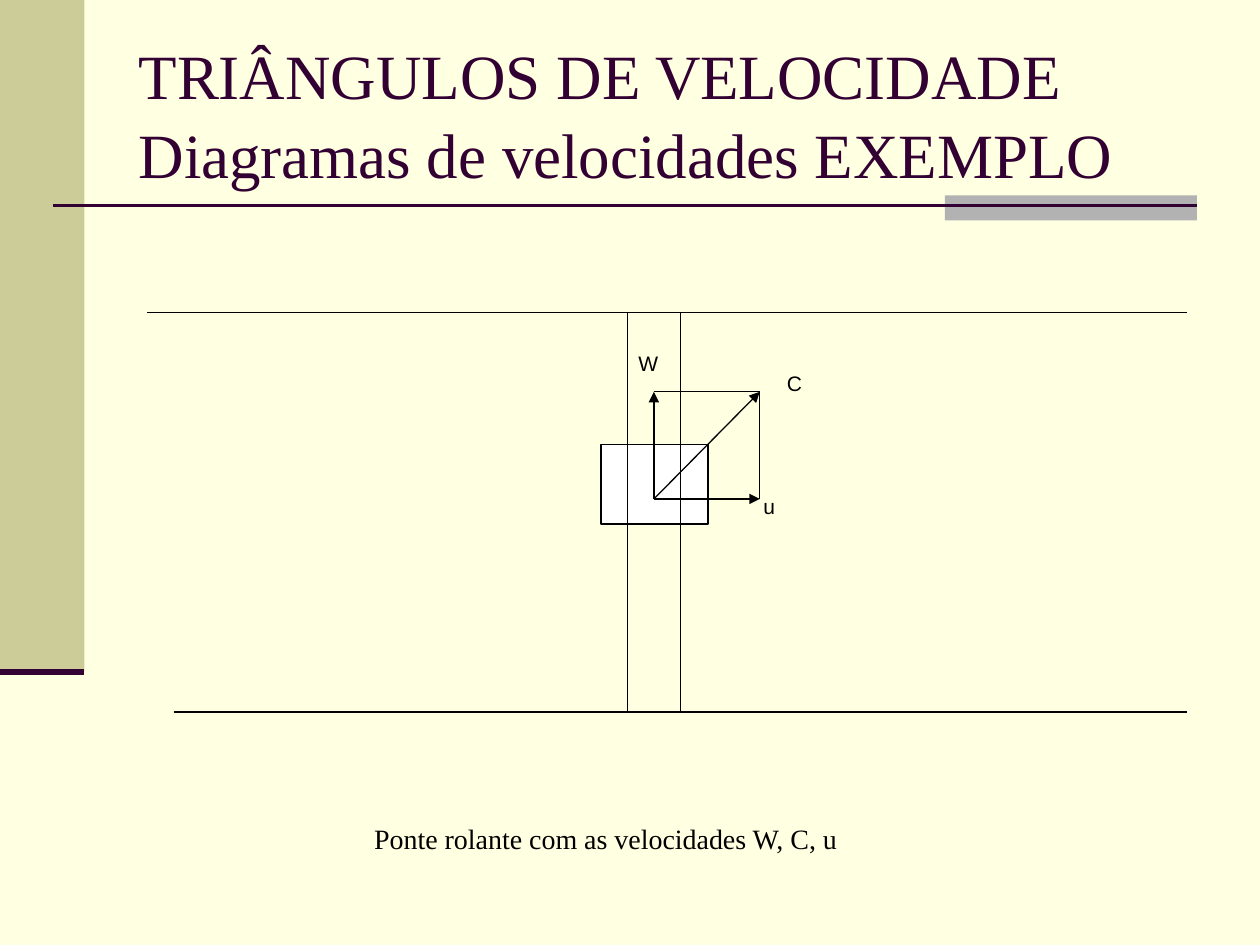
from pptx import Presentation
from pptx.dml.color import RGBColor
from pptx.enum.shapes import MSO_CONNECTOR, MSO_SHAPE
from pptx.enum.text import PP_ALIGN
from pptx.oxml.ns import qn
from pptx.util import Inches, Pt
from lxml import etree

RECTANGLE = MSO_SHAPE.RECTANGLE
STRAIGHT = MSO_CONNECTOR.STRAIGHT
LEFT, CENTER = PP_ALIGN.LEFT, PP_ALIGN.CENTER
color = RGBColor.from_string
PLUM, BLACK = "330033", "000000"

deck = Presentation()
deck.slide_width, deck.slide_height = Inches(10), Inches(7.5)
page = deck.slides.add_slide(deck.slide_layouts[6])
page.background.fill.solid()
page.background.fill.fore_color.rgb = color("FFFFE1")


def add_line(x1, y1, x2, y2, hue=BLACK, width=0.75, arrow=False):
    line = page.shapes.add_connector(
        STRAIGHT, Inches(x1), Inches(y1), Inches(x2), Inches(y2))
    line.line.color.rgb = color(hue)
    line.line.width = Pt(width)
    if arrow:
        etree.SubElement(line.line._get_or_add_ln(), qn("a:tailEnd"), type="triangle")
    etree.SubElement(line._element.spPr, qn("a:effectLst"))


def add_text(x, y, width, height, lines, font, size, hue, align=LEFT, gap=0):
    box = page.shapes.add_textbox(Inches(x), Inches(y), Inches(width), Inches(height))
    frame = box.text_frame
    frame.word_wrap = True
    frame.margin_left = frame.margin_right = Inches(0.02)
    frame.margin_top = frame.margin_bottom = Inches(0.01)
    for index, text in enumerate(lines):
        para = frame.paragraphs[0] if index == 0 else frame.add_paragraph()
        para.alignment = align
        para.space_before = Pt(gap if index else 0)
        span = para.add_run()
        span.text = text
        span.font.name, span.font.size = font, Pt(size)
        span.font.color.rgb = color(hue)


# Side band, title accent and trolley
for x, y, width, height, fill, outline in [
    (0, 0, 0.67, 5.33, "CCCC99", None),
    (7.5, 1.55, 2, 0.2, "B2B2B2", None),
    (4.77, 3.53, 0.85, 0.63, "FFFFFF", BLACK),
]:
    block = page.shapes.add_shape(
        RECTANGLE, Inches(x), Inches(y), Inches(width), Inches(height))
    block.shadow.inherit = False
    block.fill.solid()
    block.fill.fore_color.rgb = color(fill)
    if outline:
        block.line.color.rgb = color(outline)
        block.line.width = Pt(0.75)
    else:
        block.line.fill.background()

# Rules of the page frame
add_line(0.42, 1.63, 9.5, 1.63, PLUM, 1.5)
add_line(0, 5.33, 0.67, 5.33, PLUM, 3.5)

# Title and caption
add_text(1.08, 0.28, 8.42, 1.25,
         ["TRIÂNGULOS DE VELOCIDADE", "Diagramas de velocidades EXEMPLO"],
         "Times New Roman", 36, PLUM, gap=2)
add_text(2.95, 6.51, 4.5, 0.3, ["Ponte rolante com as velocidades W, C, u"],
         "Times New Roman", 16, BLACK)

# Runway rails and bridge girders
rail_top, rail_bottom = 2.48, 5.65
add_line(1.17, rail_top, 9.42, rail_top)
add_line(1.38, rail_bottom, 9.42, rail_bottom)
for x in (4.98, 5.4):
    add_line(x, rail_top, x, rail_bottom)

# Velocity vectors from the trolley, closed into a parallelogram
left, right, top, bottom = 5.19, 6.03, 3.11, 3.96
for x, y in [(left, top), (right, bottom), (right, top)]:
    add_line(left, bottom, x, y, arrow=True)
add_line(right, bottom, right, top)
add_line(left, top, right, top)

# Vector names
for name, x, y in [("u", 5.89, 3.91), ("C", 6.09, 2.93), ("W", 4.93, 2.77)]:
    add_text(x, y, 0.43, 0.42, [name], "Arial", 12, BLACK, CENTER)

deck.save("out.pptx")
